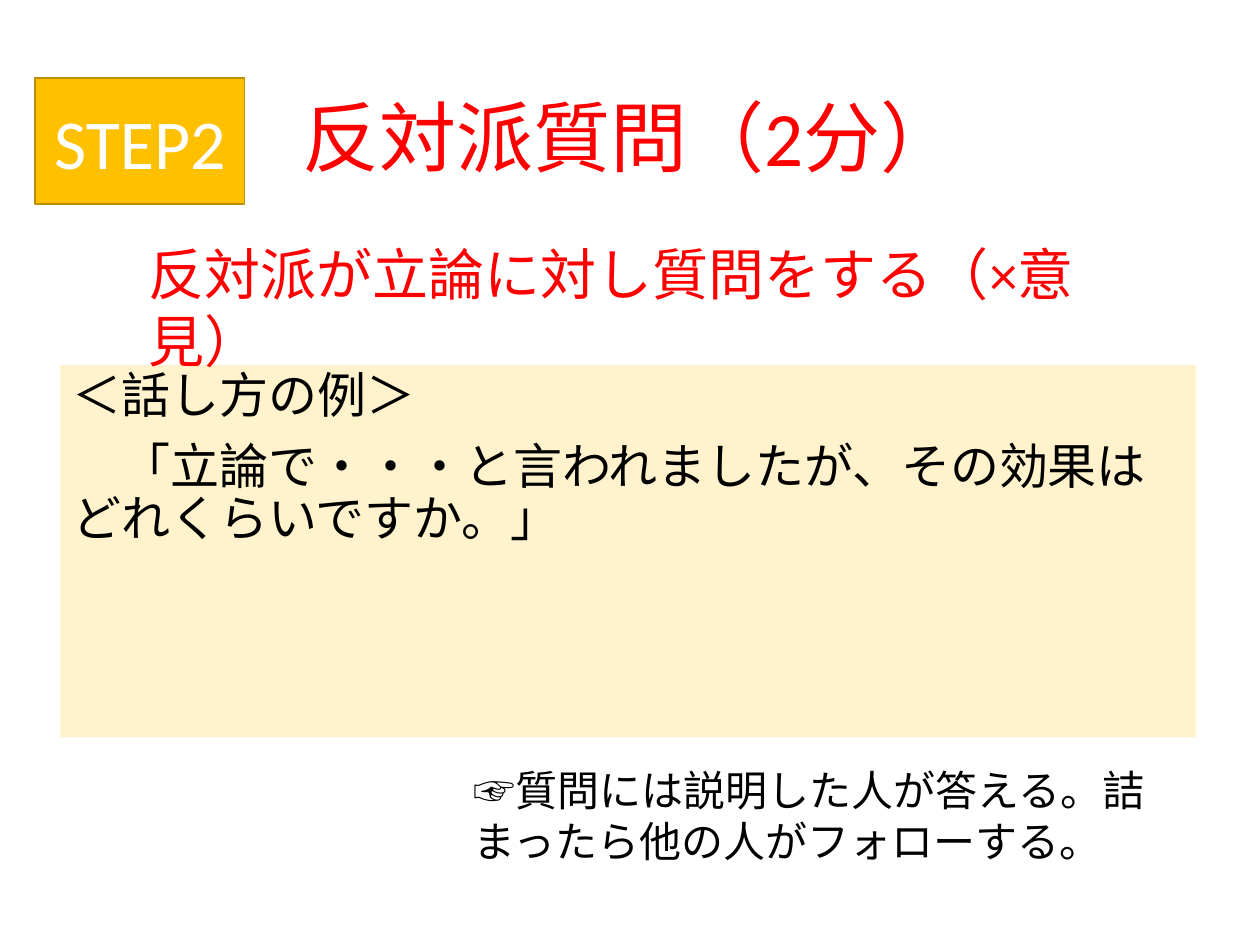
from dataclasses import dataclass
from typing import Optional

from pptx import Presentation
from pptx import util as u
from pptx.dml.color import RGBColor
from pptx.enum import shapes, text


@dataclass(frozen=True)
class Theme:
    font: str = "Calibri"
    red: str = "FF0000"
    black: str = "000000"
    white: str = "FFFFFF"
    cream: str = "FFF2CC"
    amber: str = "FFC000"
    amber_edge: str = "BD8E00"
    title: int = 44
    step: int = 40
    lead: int = 32
    example: int = 28
    note: int = 24


@dataclass(frozen=True)
class Block:
    box: tuple[float, float, float, float]
    lines: tuple[str, ...]
    size: int
    color: str
    fill: Optional[str] = None
    edge: Optional[str] = None
    centered: bool = False
    middle: bool = False
    spacing: float = 1.0
    before: float = 0


T = Theme()
BLOCKS = (
    Block((49.5, 28.75, 621, 104.4), ("反対派質問（2分）",), T.title, T.red,
          centered=True, middle=True, spacing=0.9),
    Block((34.5, 208.6, 649, 212.8),
          ("＜話し方の例＞",
           "　「立論で・・・と言われましたが、その効果はどれくらいですか。」"),
          T.example, T.black, fill=T.cream, spacing=0.9, before=10),
    Block((263.5, 433.4, 440, 65.4),
          ("☞質問には説明した人が答える。詰まったら他の人がフォローする。",),
          T.note, T.black),
    Block((77.8, 133.2, 592.6, 46),
          ("反対派が立論に対し質問をする（×意見）",), T.lead, T.red),
    Block((20.2, 44.6, 119.5, 72), ("STEP2",), T.step, T.white,
          fill=T.amber, edge=T.amber_edge, centered=True, middle=True),
)


def apply(target: object, fmt: dict[str, object]) -> None:
    for name, value in fmt.items():
        setattr(target, name, value)


def add_block(s, b: Block) -> None:
    box = [u.Pt(v) for v in b.box]
    if b.fill:
        sp = s.shapes.add_shape(shapes.MSO_SHAPE.RECTANGLE, *box)
        sp.shadow.inherit = False
        sp.fill.solid()
        sp.fill.fore_color.rgb = RGBColor.from_string(b.fill)
        if b.edge:
            sp.line.color.rgb = RGBColor.from_string(b.edge)
            sp.line.width = u.Pt(1)
        else:
            sp.line.fill.background()
    else:
        sp = s.shapes.add_textbox(*box)
    tf = sp.text_frame
    anchor = text.MSO_ANCHOR.MIDDLE if b.middle else text.MSO_ANCHOR.TOP
    align = text.PP_ALIGN.CENTER if b.centered else text.PP_ALIGN.LEFT
    apply(tf, {"word_wrap": True, "vertical_anchor": anchor})
    for i, line in enumerate(b.lines):
        p = tf.add_paragraph() if i else tf.paragraphs[0]
        apply(p, {"alignment": align, "line_spacing": b.spacing,
                  "space_before": u.Pt(b.before)})
        r = p.add_run()
        r.text = line
        apply(r.font, {"name": T.font, "size": u.Pt(b.size)})
        r.font.color.rgb = RGBColor.from_string(b.color)


def main() -> None:
    prs = Presentation()
    apply(prs, {"slide_width": u.Pt(720), "slide_height": u.Pt(540)})
    s = prs.slides.add_slide(prs.slide_layouts[6])
    for block in BLOCKS:
        add_block(s, block)
    prs.save("out.pptx")


if __name__ == "__main__":
    main()
